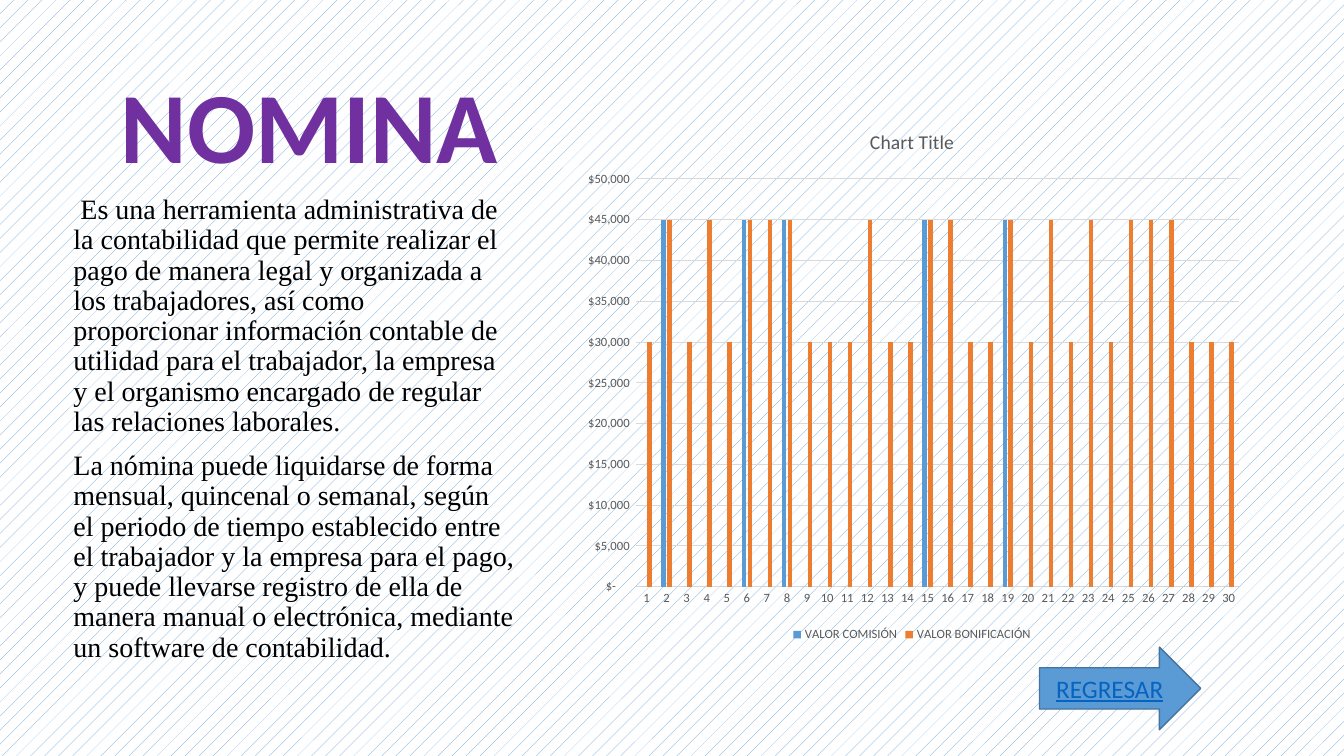
from dataclasses import dataclass

from lxml.etree import SubElement
from pptx import Presentation
from pptx.chart.data import CategoryChartData
from pptx.dml.color import RGBColor
from pptx.enum.chart import XL_CHART_TYPE, XL_LEGEND_POSITION, XL_TICK_MARK
from pptx.enum.dml import MSO_PATTERN
from pptx.enum.shapes import MSO_SHAPE
from pptx.enum.text import MSO_ANCHOR, PP_ALIGN
from pptx.oxml.ns import qn
from pptx.util import Inches, Pt


@dataclass(frozen=True)
class Theme:
    sans: str = "Calibri"
    serif: str = "Times New Roman"
    blue: str = "5B9BD5"
    orange: str = "ED7D31"
    purple: str = "7030A0"
    edge: str = "43739E"
    link: str = "0563C1"
    ink: str = "000000"
    gray: str = "595959"
    rule: str = "D9D9D9"
    white: str = "FFFFFF"
    head: int = 72
    body: int = 20
    label: int = 18
    title: int = 14
    small: int = 9


THEME = Theme()
WIDE, HIGH = Inches(13.33), Inches(7.5)

# Boxes as left, top, width, height in percent of the slide
HEAD = (6.9, 6.67, 32.26, 18.53)
BODY = (4.73, 25.2, 34.36, 65.87)
CHART = (42.54, 14.4, 50.64, 71.07)
ARROW = (77.34, 85.6, 12, 10.93)

TEXTS = (
    " Es una herramienta administrativa de la contabilidad que permite realizar "
    "el pago de manera legal y organizada a los trabajadores, así como "
    "proporcionar información contable de utilidad para el trabajador, la "
    "empresa y el organismo encargado de regular las relaciones laborales.",
    "La nómina puede liquidarse de forma mensual, quincenal o semanal, según "
    "el periodo de tiempo establecido entre el trabajador y la empresa para el "
    "pago, y puede llevarse registro de ella de manera manual o electrónica, "
    "mediante un software de contabilidad.",
)

# Days with a commission, and days with the higher bonus
DAYS = range(1, 31)
SALES = {2, 6, 8, 15, 19}
BONUS = SALES | {4, 7, 12, 16, 21, 23, 25, 26, 27}
MONEY = r'_("$"* #,##0_);_("$"* \(#,##0\);_("$"* "-"??_);_(@_)'


def place(box):
    left, top, width, height = box
    return [int(part * size / 100) for part, size in
            ((left, WIDE), (top, HIGH), (width, WIDE), (height, HIGH))]


def color(code):
    return RGBColor.from_string(code)


def style(font, size, code, face=THEME.sans, bold=False):
    font.size, font.name, font.bold = Pt(size), face, bold
    font.color.rgb = color(code)


def add_run(para, text, *look, **more):
    run = para.add_run()
    run.text = text
    style(run.font, *look, **more)
    return run


def add_box(slide, box, anchor):
    frame = slide.shapes.add_textbox(*place(box)).text_frame
    frame.word_wrap = True
    frame.vertical_anchor = anchor
    return frame


def add_back(slide):
    fill = slide.background.fill
    fill.patterned()
    fill.pattern = MSO_PATTERN.PERCENT_5
    fill.fore_color.rgb = color(THEME.blue)
    fill.back_color.rgb = color(THEME.white)


def add_head(slide, box):
    para = add_box(slide, box, MSO_ANCHOR.BOTTOM).paragraphs[0]
    para.alignment, para.line_spacing = PP_ALIGN.CENTER, 0.9
    run = add_run(para, "NOMINA", THEME.head, THEME.purple, bold=True)
    # Thin outline around the letters
    line = SubElement(run.font._element, qn("a:ln"), w=str(Pt(0.52)))
    fill = SubElement(line, qn("a:solidFill"))
    SubElement(fill, qn("a:srgbClr"), val=THEME.orange)
    run.font._element.insert(0, line)


def add_body(slide, box):
    frame = add_box(slide, box, MSO_ANCHOR.TOP)
    for spot, text in enumerate(TEXTS):
        para = frame.add_paragraph() if spot else frame.paragraphs[0]
        para.line_spacing, para.space_before = 0.9, Pt(10)
        add_run(para, text, THEME.body, THEME.ink, THEME.serif)


def add_bars(slide, box):
    data = CategoryChartData()
    data.categories = [str(day) for day in DAYS]
    data.add_series("VALOR COMISIÓN",
                    [45000 if day in SALES else 0 for day in DAYS])
    data.add_series("VALOR BONIFICACIÓN",
                    [45000 if day in BONUS else 30000 for day in DAYS])
    chart = slide.shapes.add_chart(
        XL_CHART_TYPE.COLUMN_CLUSTERED, *place(box), data).chart
    style(chart.font, THEME.small, THEME.gray)

    # Title and legend
    chart.has_title = True
    add_run(chart.chart_title.text_frame.paragraphs[0], "Chart Title",
            THEME.title, THEME.gray)
    chart.has_legend = True
    chart.legend.position = XL_LEGEND_POSITION.BOTTOM
    chart.legend.include_in_layout = False
    style(chart.legend.font, THEME.small, THEME.gray)

    # Bars
    plot = chart.plots[0]
    plot.gap_width, plot.overlap = 219, -27
    plot.vary_by_categories = False
    for series, code in zip(plot.series, (THEME.blue, THEME.orange)):
        series.format.fill.solid()
        series.format.fill.fore_color.rgb = color(code)

    # Axes
    days, money = chart.category_axis, chart.value_axis
    for axis in (days, money):
        axis.major_tick_mark = axis.minor_tick_mark = XL_TICK_MARK.NONE
        style(axis.tick_labels.font, THEME.small, THEME.gray)
    money.minimum_scale, money.maximum_scale, money.major_unit = 0, 50000, 5000
    money.tick_labels.number_format = MONEY
    money.tick_labels.number_format_is_linked = False
    money.format.line.fill.background()
    for line in (days.format.line, money.major_gridlines.format.line):
        line.color.rgb, line.width = color(THEME.rule), Pt(0.75)


def add_arrow(slide, box):
    arrow = slide.shapes.add_shape(MSO_SHAPE.RIGHT_ARROW, *place(box))
    arrow.shadow.inherit = False
    arrow.fill.solid()
    arrow.fill.fore_color.rgb = color(THEME.blue)
    arrow.line.color.rgb, arrow.line.width = color(THEME.edge), Pt(1)
    frame = arrow.text_frame
    frame.vertical_anchor = MSO_ANCHOR.MIDDLE
    para = frame.paragraphs[0]
    para.alignment = PP_ALIGN.CENTER
    run = add_run(para, "REGRESAR", THEME.label, THEME.link)
    run.font.underline = True


def main():
    deck = Presentation()
    deck.slide_width, deck.slide_height = WIDE, HIGH
    slide = deck.slides.add_slide(deck.slide_layouts[6])
    add_back(slide)
    add_head(slide, HEAD)
    add_body(slide, BODY)
    add_bars(slide, CHART)
    add_arrow(slide, ARROW)
    deck.save("out.pptx")


if __name__ == "__main__":
    main()
